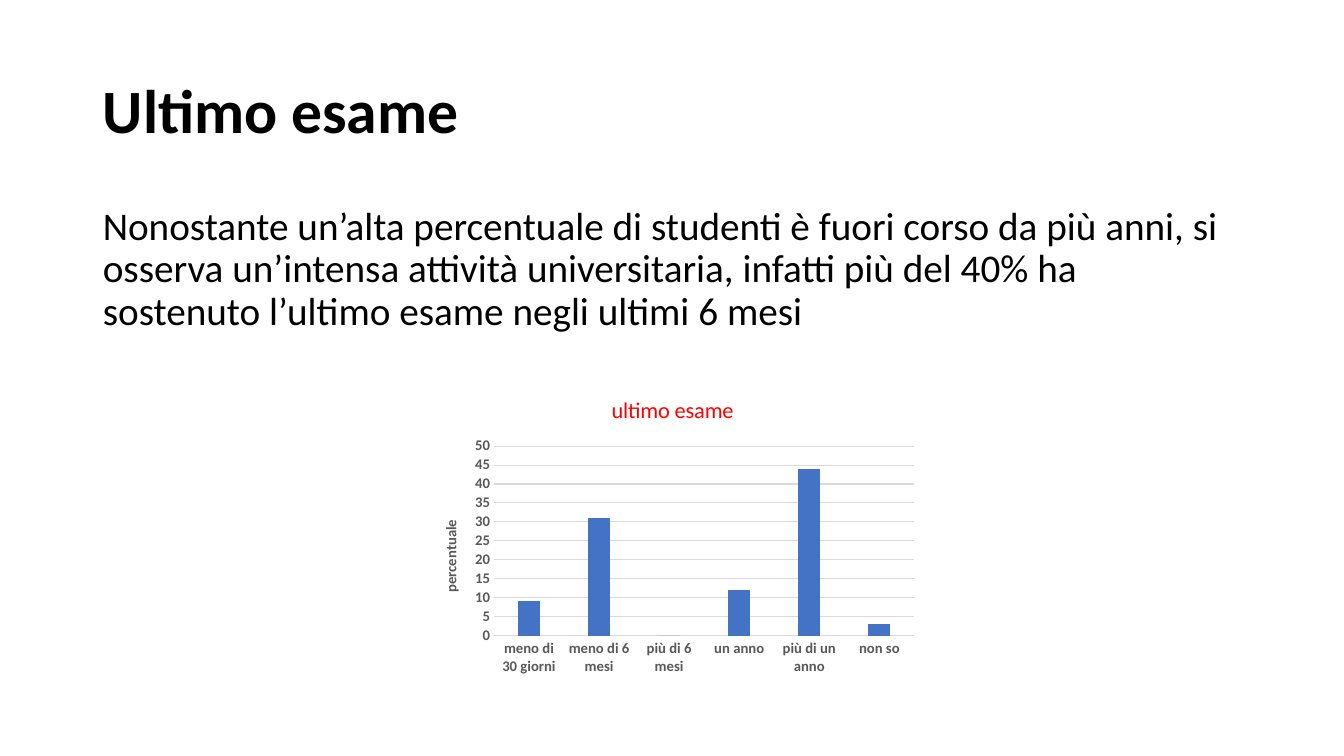
from lxml.etree import SubElement
from pptx import Presentation
from pptx.chart.data import CategoryChartData
from pptx.dml.color import RGBColor
from pptx.enum.chart import XL_CHART_TYPE as ChartType, XL_TICK_MARK as TickMark
from pptx.enum.text import MSO_ANCHOR as Anchor, MSO_AUTO_SIZE as AutoSize, PP_ALIGN as Align
from pptx.oxml.ns import qn
from pptx.util import Inches, Pt

FONT = "Calibri"
COLORS = {"text": "000000", "axis": "595959", "grid": "D9D9D9", "bar": "4472C4", "heading": "FF0000"}
LAST_EXAM = {
    "meno di 30 giorni": 9,
    "meno di 6 mesi": 31,
    "più di 6 mesi": 0,
    "un anno": 12,
    "più di un anno": 44,
    "non so": 3,
}


def color(name):
    """Return the named palette colour."""
    return RGBColor.from_string(COLORS[name])


def style_font(font, size, tint="text", bold=False):
    """Set family, size, colour and weight of a font."""
    font.name, font.size, font.bold = FONT, Pt(size), bold
    font.color.rgb = color(tint)


def write(frame, text, size, tint="text", bold=False, align=None, spacing=None, before=0):
    """Write one formatted paragraph into a text frame."""
    frame.text = text
    paragraph = frame.paragraphs[0]
    paragraph.alignment = align
    paragraph.line_spacing = spacing
    paragraph.space_before = Pt(before)
    style_font(paragraph.runs[0].font, size, tint, bold)
    return paragraph


def fill_placeholder(holder, box, anchor, text, **formatting):
    """Move a placeholder and give it a single paragraph without a bullet."""
    holder.left, holder.top, holder.width, holder.height = map(Inches, box)
    frame = holder.text_frame
    frame.word_wrap = True
    frame.auto_size = AutoSize.NONE
    frame.vertical_anchor = anchor
    paragraph = write(frame, text, align=Align.LEFT, spacing=0.9, **formatting)
    properties = paragraph._p.get_or_add_pPr()
    properties.set("marL", "0")
    properties.set("indent", "0")
    SubElement(properties, qn("a:buNone"))


def style_axis(axis):
    """Give an axis bold grey labels and no tick marks."""
    style_font(axis.tick_labels.font, 10.5, "axis", True)
    axis.major_tick_mark = axis.minor_tick_mark = TickMark.NONE


def style_line(line):
    """Draw a thin light grey line."""
    line.color.rgb = color("grid")
    line.width = Pt(0.75)


def add_exam_chart(slide, box):
    """Add the column chart of time since the last exam."""
    exam_data = CategoryChartData()
    exam_data.categories = list(LAST_EXAM)
    exam_data.add_series("ultimo esame", list(LAST_EXAM.values()))
    chart = slide.shapes.add_chart(ChartType.COLUMN_CLUSTERED, *map(Inches, box), exam_data).chart
    style_font(chart.font, 10)
    chart.has_legend = False
    chart.has_title = True
    write(chart.chart_title.text_frame, "ultimo esame", 16, "heading")
    chart.chart_title.include_in_layout = False

    periods, percentages = chart.category_axis, chart.value_axis
    for axis in (periods, percentages):
        style_axis(axis)
    style_line(periods.format.line)
    percentages.format.line.fill.background()
    percentages.minimum_scale, percentages.maximum_scale, percentages.major_unit = 0, 50, 5
    percentages.has_major_gridlines = True
    style_line(percentages.major_gridlines.format.line)
    write(percentages.axis_title.text_frame, "percentuale", 10.5, "axis", True)

    columns = chart.plots[0]
    columns.gap_width = 219
    columns.vary_by_categories = False
    bars = columns.series[0].format.fill
    bars.solid()
    bars.fore_color.rgb = color("bar")


def main():
    """Build and save the slide."""
    deck = Presentation()
    deck.slide_width, deck.slide_height = Inches(13.33), Inches(7.5)
    slide = deck.slides.add_slide(deck.slide_layouts[1])
    fill_placeholder(slide.shapes.title, (0.92, 0.4, 11.5, 1.45), Anchor.MIDDLE,
                     "Ultimo esame", size=44, bold=True)
    fill_placeholder(slide.placeholders[1], (0.92, 2, 11.5, 4.76), Anchor.TOP,
                     "Nonostante un’alta percentuale di studenti è fuori corso da più anni, "
                     "si osserva un’intensa attività universitaria, infatti più del 40% ha "
                     "sostenuto l’ultimo esame negli ultimi 6 mesi", size=28, before=10)
    add_exam_chart(slide, (4.17, 3.76, 5, 3))
    deck.save("out.pptx")


if __name__ == "__main__":
    main()
